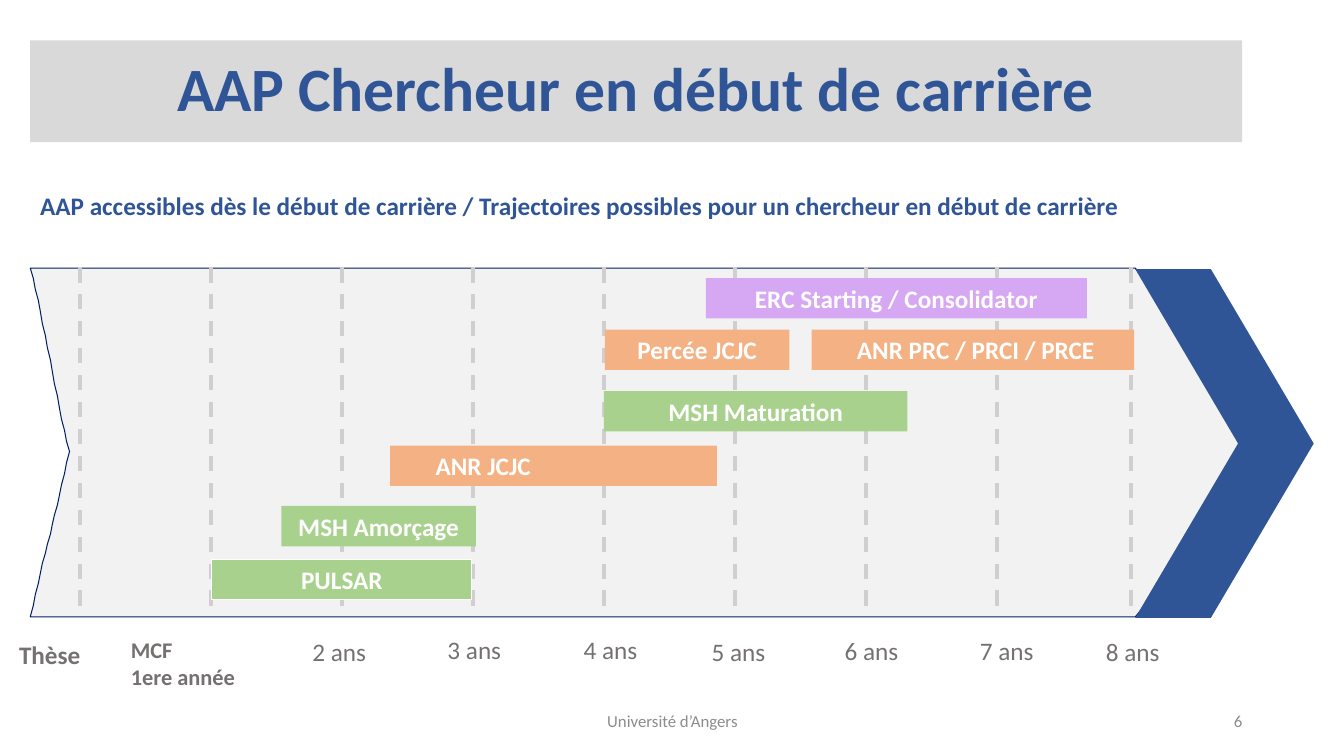
from dataclasses import dataclass

from lxml.etree import SubElement
from pptx import Presentation
from pptx.dml.color import RGBColor
from pptx.enum.dml import MSO_LINE
from pptx.enum.shapes import MSO_CONNECTOR, MSO_SHAPE
from pptx.enum.text import MSO_ANCHOR, PP_ALIGN
from pptx.oxml.ns import qn
from pptx.util import Emu, Pt

EMU_PER_PX = 9144  # 100 px to the inch


@dataclass(frozen=True)
class Theme:
    font: str = "Calibri"
    blue: str = "2F5597"
    navy: str = "002060"
    banner: str = "D9D9D9"
    track: str = "F2F2F2"
    dash: str = "D0CECE"
    label: str = "767171"
    footer: str = "8C8C8C"
    white: str = "FFFFFF"
    green: str = "A9D18E"
    orange: str = "F4B183"
    purple: str = "D6A7F3"
    title_size: int = 44
    body_size: int = 18
    small_size: int = 16
    footer_size: int = 12
    hairline: float = 0.75
    dash_width: float = 2.75


def px(length):
    return Emu(length * EMU_PER_PX)


def color(value):
    return RGBColor.from_string(value)


def cubic(start, control1, control2, end, steps=16):
    """Points along a cubic curve, without its start."""
    points = []
    for step in range(1, steps + 1):
        t = step / steps
        weights = ((1 - t) ** 3, 3 * t * (1 - t) ** 2, 3 * t * t * (1 - t), t ** 3)
        corners = (start, control1, control2, end)
        points.append(tuple(sum(w * corner[axis] for w, corner in zip(weights, corners))
                            for axis in (0, 1)))
    return points


class SlideBuilder:
    def __init__(self, page, theme):
        self.page = page
        self.theme = theme

    def paint(self, shape, fill, line=None):
        shape.shadow.inherit = False
        shape.fill.solid()
        shape.fill.fore_color.rgb = color(fill)
        if line:
            shape.line.color.rgb = color(line)
            shape.line.width = Pt(self.theme.hairline)
        else:
            shape.line.fill.background()

    def set_text(self, shape, lines, size, ink, bold=False, align=PP_ALIGN.LEFT,
                 anchor=MSO_ANCHOR.TOP):
        frame = shape.text_frame
        frame.word_wrap = True
        frame.vertical_anchor = anchor
        frame.text = lines
        for para in frame.paragraphs:
            para.alignment = align
            para.font.name = self.theme.font
            para.font.size = Pt(size)
            para.font.bold = bold
            para.font.color.rgb = color(ink)
        return frame

    def text(self, place, lines, size, ink, **style):
        box = self.page.shapes.add_textbox(*map(px, place))
        self.set_text(box, lines, size, ink, **style)

    def banner(self, place, title):
        box = self.page.shapes.add_shape(MSO_SHAPE.RECTANGLE, *map(px, place))
        self.paint(box, self.theme.banner)
        frame = self.set_text(box, title, self.theme.title_size, self.theme.blue, bold=True,
                              align=PP_ALIGN.CENTER, anchor=MSO_ANCHOR.MIDDLE)
        frame.paragraphs[0].line_spacing = 0.9

    def bar(self, place, name, fill, line=None, indent=None):
        """A programme bar; its name is centred unless an indent is given."""
        box = self.page.shapes.add_shape(MSO_SHAPE.RECTANGLE, *map(px, place))
        self.paint(box, fill, line)
        align = PP_ALIGN.CENTER if indent is None else PP_ALIGN.LEFT
        frame = self.set_text(box, name, self.theme.body_size, self.theme.white,
                              bold=True, align=align)
        if indent is not None:
            frame.margin_left, frame.margin_right = px(indent), 0

    def outline(self, points, fill, line=None):
        builder = self.page.shapes.build_freeform(*points[0], scale=EMU_PER_PX)
        builder.add_line_segments(points[1:], close=True)
        self.paint(builder.convert_to_shape(), fill, line)

    def year_line(self, x, top, bottom):
        line = self.page.shapes.add_connector(
            MSO_CONNECTOR.STRAIGHT, px(x), px(top), px(x), px(bottom))
        line.line.color.rgb = color(self.theme.dash)
        line.line.width = Pt(self.theme.dash_width)
        line.line.dash_style = MSO_LINE.DASH
        SubElement(line._element.spPr, qn("a:effectLst"))


def main():
    deck = Presentation()
    deck.slide_width, deck.slide_height = px(1333), px(750)
    theme = Theme()
    builder = SlideBuilder(deck.slides.add_slide(deck.slide_layouts[6]), theme)

    builder.banner((30, 40, 1202, 101), "AAP Chercheur en début de carrière")
    builder.text((30, 184, 1182, 40),
                 "AAP accessibles dès le début de carrière / Trajectoires possibles "
                 "pour un chercheur en début de carrière",
                 theme.body_size, theme.blue, bold=True)

    top_left, notch, bottom_left = (30, 266), (69, 448), (30, 612)
    bottom_right, top_right = (1126, 612), (1126, 266)
    track = [top_left,
             *cubic(top_left, (44, 319), (55, 395), notch),
             *cubic(notch, (55, 510), (44, 550), bottom_left),
             bottom_right,
             *cubic(bottom_right, (1275, 434), (1259, 432), top_right)]
    builder.outline(track, theme.track, theme.navy)
    chevron = [(1126, 267), (1228, 440), (1126, 613), (1201, 613), (1303, 440), (1201, 267)]
    builder.outline(chevron, theme.blue)

    for x in [*range(79, 990, 130), 1122]:
        builder.year_line(x, 265, 610)

    bar_height = 40
    bars = [
        (700, 276, 378, "ERC Starting / Consolidator", theme.purple, {}),
        (600, 327, 183, "Percée JCJC", theme.orange, {}),
        (805, 327, 320, "ANR PRC / PRCI / PRCE", theme.orange, {"indent": 45}),
        (599, 388, 301, "MSH Maturation", theme.green, {}),
        (387, 442, 324, "ANR JCJC", theme.orange, {"indent": 45}),
        (279, 502, 193, "MSH Amorçage", theme.green, {}),
        (210, 555, 258, "PULSAR", theme.green, {"line": theme.white}),
    ]
    for left, top, width, name, fill, options in bars:
        builder.bar((left, top, width, bar_height), name, fill, **options)

    builder.text((9, 629, 92, 40), "Thèse", theme.body_size, theme.label, bold=True)
    builder.text((120, 626, 174, 64), "MCF\n1ere année", theme.small_size, theme.label,
                 bold=True)
    year_places = [(300, 626), (434, 624), (569, 624), (696, 626),
                   (828, 625), (962, 625), (1087, 626)]
    for year, (left, top) in enumerate(year_places, start=2):
        builder.text((left, top, 77, 40), f"{year} ans", theme.body_size, theme.label)

    builder.text((442, 695, 450, 40), "Université d’Angers", theme.footer_size, theme.footer,
                 align=PP_ALIGN.CENTER, anchor=MSO_ANCHOR.MIDDLE)
    builder.text((942, 695, 300, 40), "6", theme.footer_size, theme.footer,
                 align=PP_ALIGN.RIGHT, anchor=MSO_ANCHOR.MIDDLE)

    deck.save("out.pptx")


if __name__ == "__main__":
    main()
